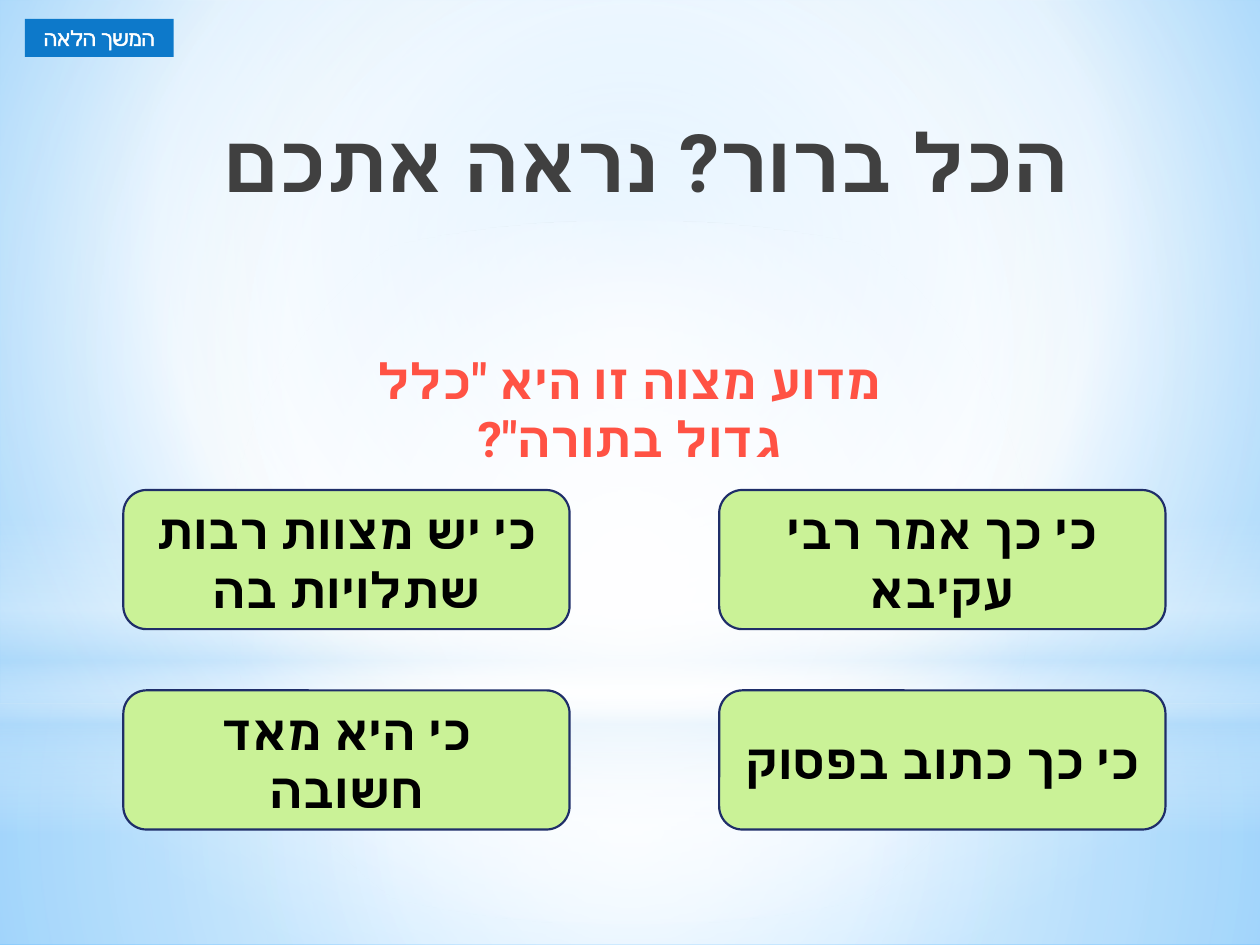
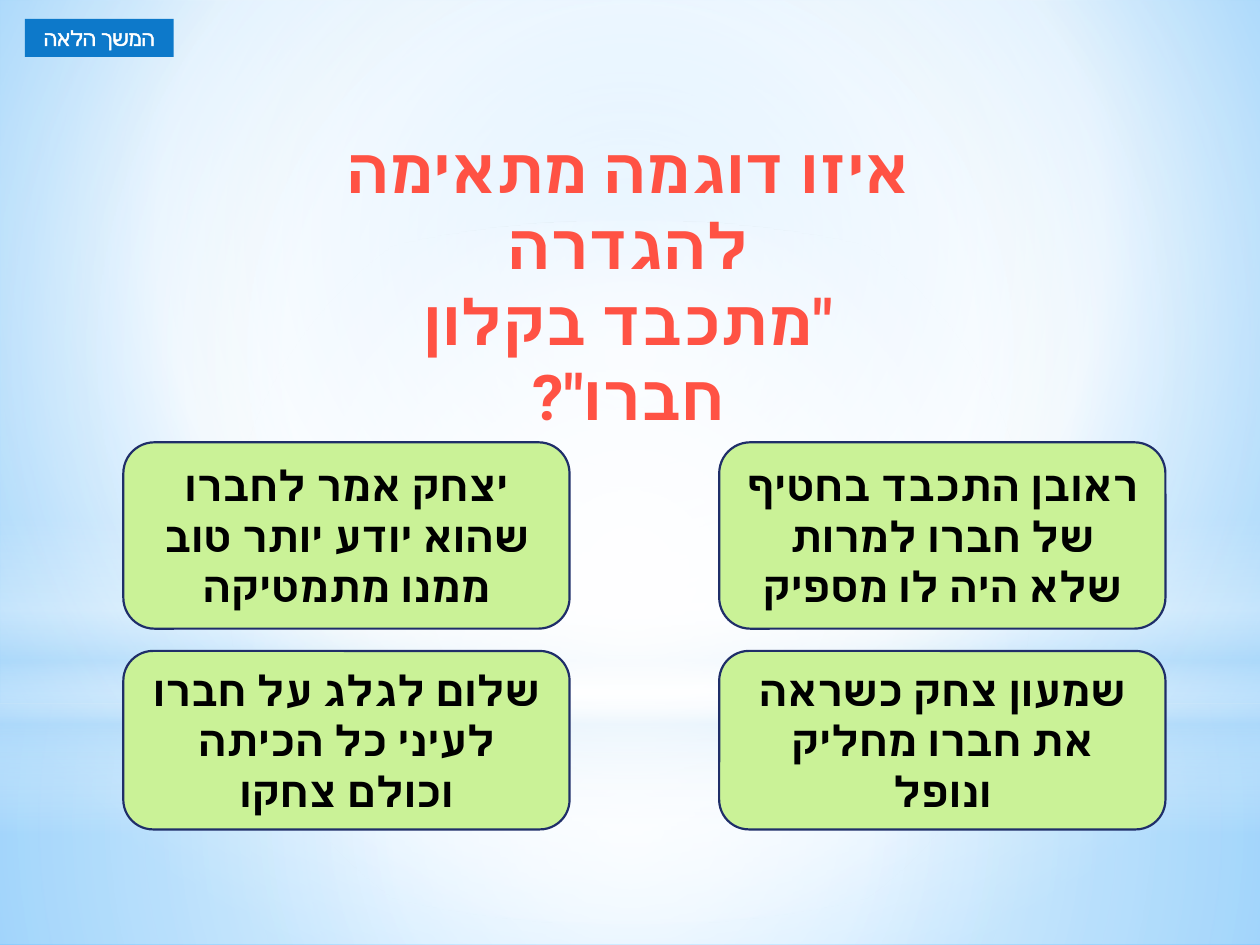
from dataclasses import dataclass

import pptx
import pptx.util
import pptx.dml.color
import pptx.enum.shapes
import pptx.enum.text
import pptx.oxml
import pptx.oxml.ns
from lxml import etree

Pt = pptx.util.Pt
qn = pptx.oxml.ns.qn
ShapeKind = pptx.enum.shapes.MSO_SHAPE
Align = pptx.enum.text.PP_ALIGN
Anchor = pptx.enum.text.MSO_ANCHOR
AutoSize = pptx.enum.text.MSO_AUTO_SIZE


@dataclass(frozen=True)
class Box:
    left: float
    top: float
    width: float
    height: float

    def lengths(self):
        return [Pt(value) for value in (self.left, self.top, self.width, self.height)]


@dataclass(frozen=True)
class Gradient:
    """Stops are (position, colour, opacity), all in percent.

    Without a focus (left, top, right, bottom) it runs downwards.
    """
    stops: tuple
    focus: tuple = None


CENTRE = (50, 50, 50, 50)


@dataclass(frozen=True)
class Theme:
    font: str = "Roboto"
    white: str = "FFFFFF"
    black: str = "000000"
    button: str = "0D79CA"
    answer: str = "CAF297"
    answer_line: str = "1F2E69"
    line_width: float = 1.25
    outline_width: float = 1.45
    title_size: int = 46
    button_size: int = 12
    title_ink: Gradient = Gradient(
        ((0, "000000", 100), (40, "404040", 100), (100, "212745", 65)))
    question_ink: Gradient = Gradient(
        ((0, "8A1300", 100), (78, "FF5244", 100), (100, "FFF0F0", 100)))
    background: Gradient = Gradient(
        ((0, "9ED5FF", 100), (60, "FFFFFF", 100), (100, "5BB9FF", 100)), (20, 10, 20, 60))
    floor: Gradient = Gradient(
        ((0, "FFFFFF", 91), (37, "FFFFFF", 76), (100, "B4DCFA", 79)), CENTRE)
    sky: Gradient = Gradient(
        ((0, "FFFFFF", 89), (48, "FFFFFF", 62), (100, "B4DCFA", 79)), CENTRE)
    horizon: Gradient = Gradient(
        ((0, "FFFFFF", 0), (29, "FFFFFF", 30), (45, "B4DCFA", 40),
         (55, "FFFFFF", 26), (65, "B4DCFA", 60), (100, "FFFFFF", 0)))
    glow: Gradient = Gradient(((0, "FFFFFF", 100), (56, "FFFFFF", 0)), CENTRE)


THEME = Theme()
PAGE = Box(0, 0, 720, 540)


def rgb(colour):
    return pptx.dml.color.RGBColor.from_string(colour)


def define_gradients(owner, gradient):
    """Rewrite every gradient fill found inside the XML element owner."""
    for fill in owner.iter(qn("a:gradFill")):
        for child in list(fill):
            fill.remove(child)
        stop_list = etree.SubElement(fill, qn("a:gsLst"))
        for position, colour, opacity in gradient.stops:
            stop = etree.SubElement(stop_list, qn("a:gs"), pos=str(position * 1000))
            tint = etree.SubElement(stop, qn("a:srgbClr"), val=colour)
            if opacity < 100:
                etree.SubElement(tint, qn("a:alpha"), val=str(opacity * 1000))
        if gradient.focus:
            shade = etree.SubElement(fill, qn("a:path"), path="circle")
            sides = {side: str(share * 1000) for side, share in zip("ltrb", gradient.focus)}
            etree.SubElement(shade, qn("a:fillToRect"), **sides)
        else:
            etree.SubElement(fill, qn("a:lin"), ang="5400000", scaled="0")


def write_text(shape, text, size, ink, bold=True, align=Align.CENTER, anchor=Anchor.TOP,
               auto_size=AutoSize.NONE):
    """Put right-to-left text in a shape; ink is a colour or a Gradient."""
    frame = shape.text_frame
    frame.text = text
    frame.word_wrap = True
    frame.auto_size = auto_size
    frame.vertical_anchor = anchor
    for para in frame.paragraphs:
        para.alignment = align
        para._p.get_or_add_pPr().set("rtl", "1")
        for span in para.runs:
            font = span.font
            font.size = Pt(size)
            font.bold = bold
            font.name = THEME.font
            if isinstance(ink, Gradient):
                font.fill.gradient()
            else:
                font.color.rgb = rgb(ink)
            etree.SubElement(span._r.get_or_add_rPr(), qn("a:cs"), typeface=THEME.font)
    if isinstance(ink, Gradient):
        define_gradients(frame._txBody, ink)


def add_panel(page, kind, box, fill):
    """Add a shape without line or shadow; fill is a colour or a Gradient."""
    panel = page.shapes.add_shape(kind, *box.lengths())
    panel.shadow.inherit = False
    panel.line.fill.background()
    if isinstance(fill, Gradient):
        panel.fill.gradient()
        define_gradients(panel.element.spPr, fill)
    else:
        panel.fill.solid()
        panel.fill.fore_color.rgb = rgb(fill)
    return panel


def build_backdrop(master, page, box):
    """Draw the sky on a page and move it behind everything on the master."""
    master.background.fill.gradient()
    define_gradients(master.element, THEME.background)
    horizon_top = 402
    layers = [
        (ShapeKind.RECTANGLE, horizon_top, box.height - horizon_top, THEME.floor),
        (ShapeKind.RECTANGLE, 0, horizon_top, THEME.sky),
        (ShapeKind.RECTANGLE, 296.5, 180, THEME.horizon),
        (ShapeKind.OVAL, 126, horizon_top, THEME.glow),
    ]
    first_place = 2
    for place, (kind, top, height, fill) in enumerate(layers, first_place):
        layer = add_panel(page, kind, Box(box.left, box.top + top, box.width, height), fill)
        master.shapes.element.insert(place, layer.element)


def add_title(page, box, text):
    title = page.shapes.title
    title.left, title.top, title.width, title.height = box.lengths()
    write_text(title, text, THEME.title_size, THEME.title_ink, align=Align.RIGHT)


def add_continue_button(page, box):
    button = add_panel(page, ShapeKind.RECTANGLE, box, THEME.button)
    write_text(button, "המשך הלאה", THEME.button_size, THEME.white, bold=False,
               auto_size=AutoSize.SHAPE_TO_FIT_TEXT)
    for properties in button.element.iter(qn("a:rPr")):
        outline = etree.Element(qn("a:ln"), w=str(Pt(THEME.outline_width)))
        solid = etree.SubElement(outline, qn("a:solidFill"))
        etree.SubElement(solid, qn("a:srgbClr"), val=THEME.white)
        properties.insert(0, outline)


def add_question(page, box, text, size):
    question = page.shapes.add_textbox(*box.lengths())
    write_text(question, text, size, THEME.question_ink, auto_size=AutoSize.SHAPE_TO_FIT_TEXT)


def add_answers(page, box, rows, row_heights, size):
    """Fill the box with rows of two answers, the right-hand one first."""
    width = 255
    gap = (box.height - sum(row_heights)) / (len(rows) - 1)
    lefts = (box.left + box.width - width, box.left)
    top = box.top
    for answers, height in zip(rows, row_heights):
        for left, text in zip(lefts, answers):
            card = add_panel(page, ShapeKind.ROUNDED_RECTANGLE,
                             Box(left, top, width, height), THEME.answer)
            card.line.color.rgb = rgb(THEME.answer_line)
            card.line.width = Pt(THEME.line_width)
            write_text(card, text, size, THEME.black, anchor=Anchor.MIDDLE)
        top += height + gap


def build_quiz(page, box, question_box, question, question_size,
               answers_top, rows, row_heights, answer_size):
    add_continue_button(page, Box(box.left + 14.25, box.top + 10.75, 85, 21.75))
    add_question(page, question_box, question, question_size)
    bottom = box.top + 474
    answer_box = Box(box.left + 70.5, answers_top, 595.5, bottom - answers_top)
    add_answers(page, answer_box, rows, row_heights, answer_size)


def main():
    deck = pptx.Presentation()
    deck.slide_width, deck.slide_height = Pt(PAGE.width), Pt(PAGE.height)
    title_only, blank = deck.slide_layouts[5], deck.slide_layouts[6]

    reason_page = deck.slides.add_slide(title_only)
    build_backdrop(deck.slide_master, reason_page, PAGE)
    add_title(reason_page, Box(105, 60.5, 512.75, 90), "הכל ברור? נראה אתכם")
    build_quiz(
        reason_page, PAGE,
        Box(183.75, 196.5, 352, 41), 'מדוע מצוה זו היא "כלל גדול בתורה"?', 28,
        280, [("כי כך אמר רבי עקיבא", "כי יש מצוות רבות שתלויות בה"),
              ("כי כך כתוב בפסוק", "כי היא מאד חשובה")],
        (79.5, 79.5), 28)

    example_page = deck.slides.add_slide(blank)
    build_quiz(
        example_page, PAGE,
        Box(188.75, 71.25, 340.5, 94.25),
        'איזו דוגמה מתאימה להגדרה\n"מתכבד בקלון חברו"?', 36,
        252.75, [("ראובן התכבד בחטיף של חברו למרות שלא היה לו מספיק",
                  "יצחק אמר לחברו שהוא יודע יותר טוב ממנו מתמטיקה"),
                 ("שמעון צחק כשראה את חברו מחליק ונופל",
                  "שלום לגלג על חברו לעיני כל הכיתה וכולם צחקו")],
        (106.5, 102), 24)

    deck.save("out.pptx")


if __name__ == "__main__":
    main()
